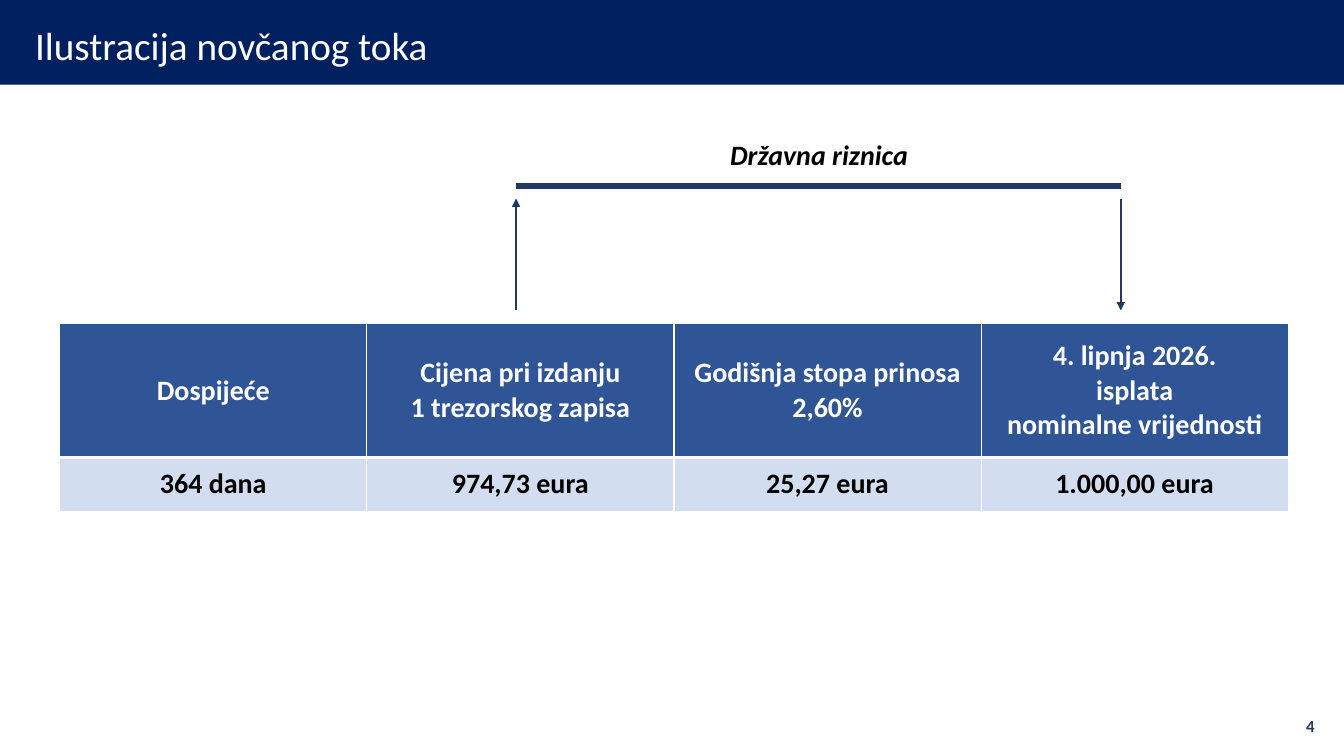
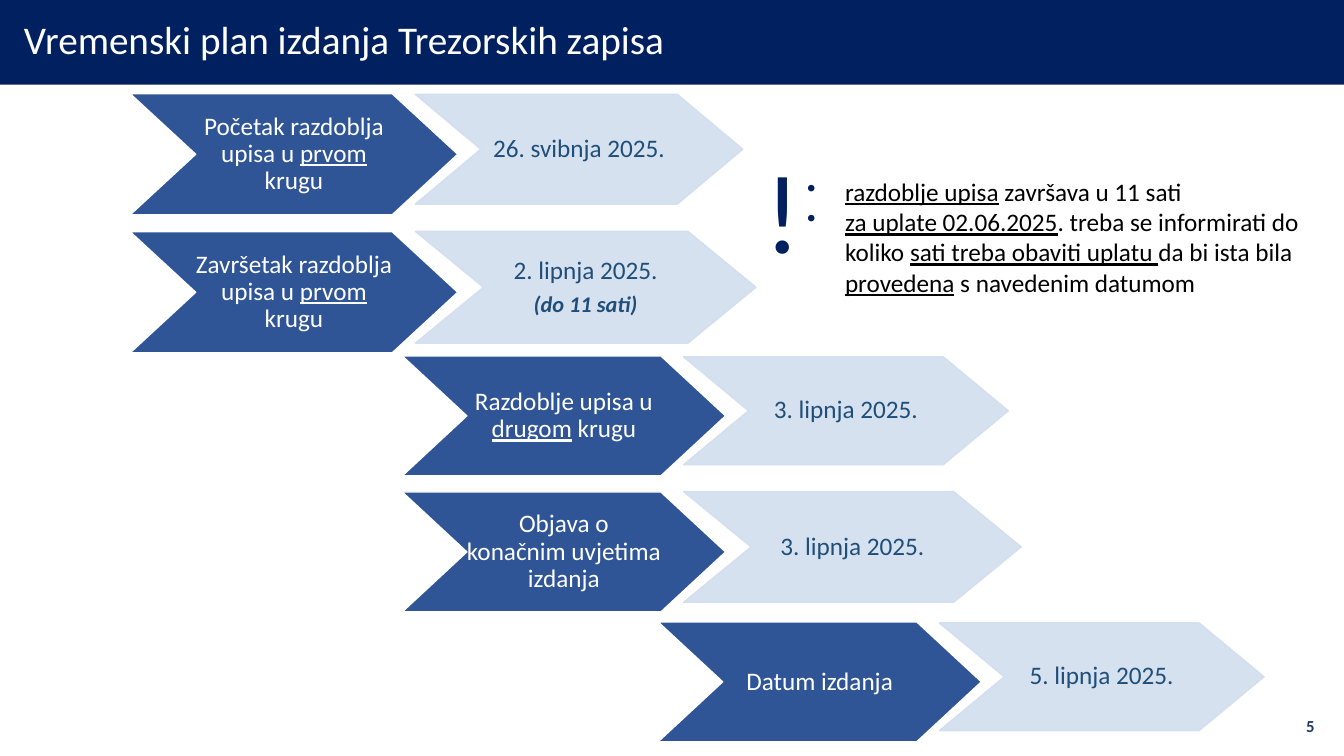
from dataclasses import dataclass
from typing import NamedTuple

from lxml import etree
from pptx import Presentation
from pptx.dml.color import RGBColor
from pptx.enum.shapes import MSO_CONNECTOR, MSO_SHAPE
from pptx.enum.text import MSO_ANCHOR, PP_ALIGN
from pptx.oxml.ns import qn
from pptx.util import Pt

LEFT, CENTER, RIGHT = PP_ALIGN.LEFT, PP_ALIGN.CENTER, PP_ALIGN.RIGHT
TOP, MIDDLE = MSO_ANCHOR.TOP, MSO_ANCHOR.MIDDLE
STRAIGHT = MSO_CONNECTOR.STRAIGHT
RECTANGLE, CHEVRON = MSO_SHAPE.RECTANGLE, MSO_SHAPE.CHEVRON


@dataclass(frozen=True)
class Theme:
    font: str = "Calibri"
    navy: str = "002060"
    ink: str = "203864"
    blue: str = "2F5597"
    pale: str = "D2DEEF"
    date: str = "1F4E79"
    white: str = "FFFFFF"
    black: str = "000000"
    title: float = 28
    heading: float = 20
    body: float = 18
    note: float = 16
    number: float = 12
    mark: float = 80


THEME = Theme()
WIDTH, HEIGHT = 960, 540
BAND_HEIGHT = 60.5


class Box(NamedTuple):
    left: float
    top: float
    width: float
    height: float

    def lengths(self) -> list:
        return [Pt(value) for value in self]


class Span(NamedTuple):
    text: str
    underline: bool = False
    bold: bool = False
    italic: bool = False
    size: float | None = None


class Step(NamedTuple):
    """One stage: dark chevron place and size, its label, pale chevron size, its date."""
    left: float
    top: float
    width: float
    height: float
    label: list
    date_width: float
    date_height: float
    date: list


STEPS = [
    Step(93, 67, 234, 86.4,
         [[Span("Početak razdoblja upisa u "), Span("prvom ", underline=True), Span("krugu")]],
         234, 78.5, ["26. svibnja 2025."]),
    Step(93, 165.6, 234, 86.4,
         [[Span("Završetak razdoblja upisa u "), Span("prvom", underline=True), Span(" krugu")]],
         243.4, 80, ["2. lipnja 2025.",
                     [Span("(do 11 sati)", bold=True, italic=True, size=THEME.note)]]),
    Step(287.3, 254.2, 231, 85.7,
         [[Span("Razdoblje upisa u "), Span("drugom", underline=True), Span(" krugu")]],
         232, 77, ["3. lipnja 2025."]),
    Step(287.3, 351.4, 231, 85.7, ["Objava o konačnim uvjetima izdanja"],
         241.2, 79, ["3. lipnja 2025."]),
    Step(470, 444.2, 231, 85.7, ["Datum izdanja"], 232, 77, ["5. lipnja 2025."]),
]

CASH_FLOW = [
    [["Dospijeće"], ["Cijena pri izdanju", "1 trezorskog zapisa"],
     ["Godišnja stopa prinosa", "2,60%"],
     ["4. lipnja 2026.", "isplata", "nominalne vrijednosti"]],
    [["364 dana"], ["974,73 eura"], ["25,27 eura"], ["1.000,00 eura"]],
]

DEADLINES = [
    [Span("razdoblje upisa", underline=True), Span(" završava u 11 sati")],
    [Span("za uplate 02.06.2025", underline=True),
     Span(". treba se informirati do koliko "),
     Span("sati treba obaviti uplatu ", underline=True),
     Span("da bi ista bila "), Span("provedena", underline=True),
     Span(" s navedenim datumom")],
]


def rgb(color: str) -> RGBColor:
    return RGBColor.from_string(color)


def add_bullet(para, color: str, indent: float) -> None:
    properties = para._p.get_or_add_pPr()
    properties.set("marL", str(Pt(indent)))
    properties.set("indent", str(-Pt(indent)))
    bullet_color = etree.SubElement(properties, qn("a:buClr"))
    etree.SubElement(bullet_color, qn("a:srgbClr"), val=color)
    etree.SubElement(properties, qn("a:buChar"), char="•")


def write(frame, paragraphs: list, *, size: float, color: str, align=LEFT, anchor=TOP,
          bold: bool = False, italic: bool = False, spacing: float | None = None,
          gap: float = 0, bullet: str | None = None) -> None:
    """Fill a text frame; each paragraph is a string or a list of spans."""
    frame.word_wrap = True
    frame.vertical_anchor = anchor
    for index, content in enumerate(paragraphs):
        para = frame.add_paragraph() if index else frame.paragraphs[0]
        para.alignment = align
        if spacing:
            para.line_spacing = spacing
        if index and gap:
            para.space_before = Pt(gap)
        if bullet:
            add_bullet(para, bullet, 27)
        for span in [Span(content)] if isinstance(content, str) else content:
            run = para.add_run()
            run.text = span.text
            font = run.font
            font.name = THEME.font
            font.size = Pt(span.size or size)
            font.color.rgb = rgb(color)
            font.bold = bold or span.bold
            font.italic = italic or span.italic
            font.underline = span.underline


def add_text(page, box: Box, paragraphs: list, **style) -> None:
    write(page.shapes.add_textbox(*box.lengths()).text_frame, paragraphs, **style)


def add_page(deck, title: str, left: float, top: float, number: int):
    """Add a blank page with the title band and page number."""
    page = deck.slides.add_slide(deck.slide_layouts[6])
    band = page.shapes.add_shape(RECTANGLE, *Box(0, 0, WIDTH, BAND_HEIGHT).lengths())
    band.shadow.inherit = False
    band.fill.solid()
    band.fill.fore_color.rgb = rgb(THEME.navy)
    band.line.fill.background()
    add_text(page, Box(left, top, 828, 51), [title], size=THEME.title,
             color=THEME.white, anchor=MIDDLE, spacing=0.9)
    add_text(page, Box(914.4, 504, 31.7, 28.8), [str(number)], size=THEME.number,
             color=THEME.ink, align=RIGHT, anchor=MIDDLE, bold=True)
    return page


def add_line(page, start: tuple[float, float], end: tuple[float, float], width: float,
             arrow: bool = False) -> None:
    line = page.shapes.add_connector(STRAIGHT, *(Pt(value) for value in start + end))
    line.line.color.rgb = rgb(THEME.ink)
    line.line.width = Pt(width)
    if arrow:
        etree.SubElement(line.line._get_or_add_ln(), qn("a:tailEnd"), type="triangle")
    etree.SubElement(line._element.spPr, qn("a:effectLst"))


def add_border(cell, side: str, width: float) -> None:
    properties = cell._tc.get_or_add_tcPr()
    border = etree.SubElement(properties, qn(f"a:ln{side}"), w=str(Pt(width)))
    fill = etree.SubElement(border, qn("a:solidFill"))
    etree.SubElement(fill, qn("a:srgbClr"), val=THEME.white)


def add_cash_flow_table(page, box: Box, heights: list[float]) -> None:
    rows, columns = len(CASH_FLOW), len(CASH_FLOW[0])
    table = page.shapes.add_table(rows, columns, *box.lengths()).table
    table.first_row = table.horz_banding = False
    for column in table.columns:
        column.width = Pt(box.width / columns)
    for row_index, height in enumerate(heights):
        table.rows[row_index].height = Pt(height)
        header = row_index == 0
        for column_index, lines in enumerate(CASH_FLOW[row_index]):
            cell = table.cell(row_index, column_index)
            cell.vertical_anchor = MIDDLE
            for side in "LRTB":
                at_rule = side == ("B" if header else "T")
                add_border(cell, side, 3 if at_rule else 1)
            cell.fill.solid()
            cell.fill.fore_color.rgb = rgb(THEME.blue if header else THEME.pale)
            write(cell.text_frame, lines, size=THEME.heading, align=CENTER, bold=True,
                  color=THEME.white if header else THEME.black)


def add_chevron(page, box: Box, paragraphs: list, *, fill: str, outline: str, color: str,
                opacity: int = 100) -> None:
    """Draw a chevron whose point takes a fifth of its width."""
    chevron = page.shapes.add_shape(CHEVRON, *box.lengths())
    chevron.adjustments[0] = 0.2 * box.width / box.height
    chevron.shadow.inherit = False
    chevron.fill.solid()
    chevron.fill.fore_color.rgb = rgb(fill)
    chevron.line.color.rgb = rgb(outline)
    chevron.line.width = Pt(1)
    if opacity < 100:
        for tint in chevron._element.spPr.iter(qn("a:srgbClr")):
            etree.SubElement(tint, qn("a:alpha"), val=str(opacity * 1000))
    frame = chevron.text_frame
    frame.margin_left = frame.margin_right = frame.margin_top = frame.margin_bottom = 0
    write(frame, paragraphs, size=THEME.body, color=color, align=CENTER, anchor=MIDDLE,
          spacing=0.9, gap=6)


def add_step(page, step: Step) -> None:
    date_left = step.left + 0.87 * step.width
    date_top = step.top + (step.height - step.date_height) / 2 - 3.6
    add_chevron(page, Box(step.left, step.top, step.width, step.height), step.label,
                fill=THEME.blue, outline=THEME.white, color=THEME.white)
    add_chevron(page, Box(date_left, date_top, step.date_width, step.date_height), step.date,
                fill=THEME.pale, outline=THEME.pale, color=THEME.date, opacity=90)


def build_cash_flow(deck) -> None:
    page = add_page(deck, "Ilustracija novčanog toka", 18, 8.6, 4)
    add_cash_flow_table(page, Box(42.7, 231, 877.6, 134.3), [95.8, 38.5])
    issue, payout = 368.6, 800.6
    bar, upper, lower = 132.8, 141.8, 221.8
    add_line(page, (issue, bar), (payout, bar), 4.5)
    add_line(page, (issue, lower), (issue, upper), 1.5, arrow=True)
    add_line(page, (payout, upper), (payout, lower), 1.5, arrow=True)
    add_text(page, Box(406, 94.3, 358, 31.5), ["Državna riznica"], size=THEME.heading,
             color=THEME.black, align=CENTER, bold=True, italic=True)


def build_schedule(deck) -> None:
    page = add_page(deck, "Vremenski plan izdanja Trezorskih zapisa", 10, 4.3, 5)
    for step in STEPS:
        add_step(page, step)
    add_text(page, Box(569.5, 122.4, 390.5, 94.5), DEADLINES, size=THEME.body,
             color=THEME.black, bullet=THEME.navy)
    add_text(page, Box(481, 97.2, 156, 104.4), ["!"], size=THEME.mark,
             color=THEME.navy, align=CENTER)


def main() -> None:
    deck = Presentation()
    deck.slide_width, deck.slide_height = Pt(WIDTH), Pt(HEIGHT)
    build_cash_flow(deck)
    build_schedule(deck)
    deck.save("out.pptx")


if __name__ == "__main__":
    main()
